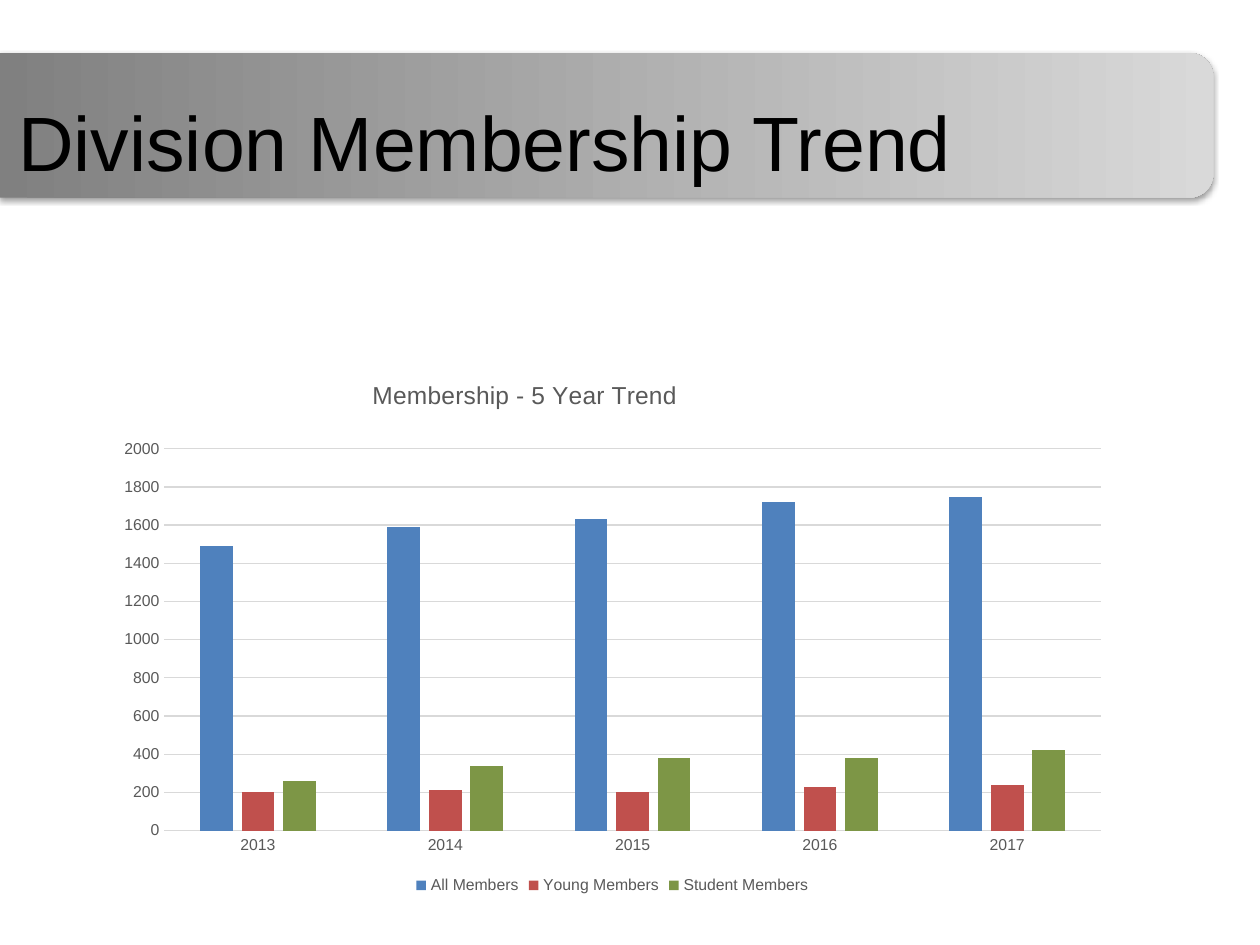
"""Build the division membership trend slide with python-pptx."""
from pptx import Presentation
from pptx.chart.data import CategoryChartData
from pptx.dml.color import RGBColor
from pptx.enum.chart import XL_CHART_TYPE, XL_LEGEND_POSITION, XL_TICK_MARK
from pptx.enum.shapes import MSO_SHAPE
from pptx.enum.text import MSO_ANCHOR, PP_ALIGN
from pptx.oxml import parse_xml
from pptx.oxml.ns import nsdecls, qn
from pptx.util import Pt

COLUMNS = XL_CHART_TYPE.COLUMN_CLUSTERED
LEGEND_BOTTOM = XL_LEGEND_POSITION.BOTTOM
NO_TICK = XL_TICK_MARK.NONE
ROUND_END = MSO_SHAPE.ROUND_2_SAME_RECTANGLE
MIDDLE = MSO_ANCHOR.MIDDLE
CENTER = PP_ALIGN.CENTER
TITLE_ONLY = 5

COLORS = {
    "title": "000000", "label": "595959", "grid": "D9D9D9",
    "banner_dark": "808080", "banner_light": "D9D9D9", "shadow": "000000",
    "All Members": "4F81BD", "Young Members": "C0504D", "Student Members": "7D9646",
}
YEARS = ["2013", "2014", "2015", "2016", "2017"]
MEMBERS = {
    "All Members": [1490, 1590, 1630, 1720, 1750],
    "Young Members": [200, 210, 200, 230, 240],
    "Student Members": [260, 340, 380, 380, 420],
}


class SlideBuilder:
    """Hold the style and the current slide."""

    font_name = "Arial"

    def __init__(self, slide):
        self.slide = slide

    def color(self, key):
        return RGBColor.from_string(COLORS[key])

    def style(self, font, size, key):
        font.name, font.size, font.bold = self.font_name, Pt(size), False
        font.color.rgb = self.color(key)

    def line(self, line, key):
        line.color.rgb = self.color(key)
        line.width = Pt(0.75)

    def banner(self, left, top, width, height):
        center_x, center_y = left + width / 2, top + height / 2
        banner = self.slide.shapes.add_shape(
            ROUND_END, Pt(center_x - height / 2), Pt(center_y - width / 2), Pt(height), Pt(width))
        banner.rotation = 90
        banner.line.fill.background()
        banner.fill.gradient()
        banner.fill.gradient_angle = 90
        for stop, key in zip(banner.fill.gradient_stops, ("banner_dark", "banner_light")):
            stop.color.rgb = self.color(key)
        banner.fill.gradient_stops[0].position = 0
        banner.fill.gradient_stops[1].position = 1
        banner._element.spPr.append(parse_xml(
            f'<a:effectLst {nsdecls("a")}><a:outerShdw blurRad="{Pt(3.1)}" dist="{Pt(1.6)}" '
            f'dir="5400000" rotWithShape="0"><a:srgbClr val="{COLORS["shadow"]}">'
            '<a:alpha val="38000"/></a:srgbClr></a:outerShdw></a:effectLst>'))
        self.slide.shapes._spTree.insert(2, banner._element)

    def title(self, text, left, top, width, height):
        title = self.slide.shapes.title
        title.left, title.top, title.width, title.height = map(Pt, (left, top, width, height))
        title.text_frame.text = text
        title.text_frame.vertical_anchor = MIDDLE
        heading = title.text_frame.paragraphs[0]
        heading.alignment = CENTER
        self.style(heading.font, 44, "title")

    def layout(self, parent, index, inner=False, **fractions):
        for old in parent.findall(qn("c:layout")):
            parent.remove(old)
        target = '<c:layoutTarget val="inner"/>' if inner else ""
        modes = '<c:xMode val="edge"/><c:yMode val="edge"/>'
        sizes = "".join(f'<c:{side} val="{value}"/>' for side, value in fractions.items())
        parent.insert(index, parse_xml(
            f'<c:layout {nsdecls("c")}><c:manualLayout>{target}{modes}{sizes}'
            '</c:manualLayout></c:layout>'))

    def column_chart(self, heading, categories, series, left, top, width, height):
        data = CategoryChartData()
        data.categories = categories
        for name, values in series.items():
            data.add_series(name, values)
        chart = self.slide.shapes.add_chart(
            COLUMNS, Pt(left), Pt(top), Pt(width), Pt(height), data).chart
        self.style(chart.font, 10, "title")

        chart.has_title = True
        chart.chart_title.include_in_layout = False
        caption = chart.chart_title.text_frame
        caption.text = heading
        self.style(caption.paragraphs[0].font, 14, "label")
        self.layout(chart.chart_title._element, 1, x=0.26, y=0.01)
        plot_area = chart._chartSpace.chart.plotArea
        self.layout(plot_area, 0, inner=True, x=0.06, y=0.15, w=0.92, h=0.72)

        chart.has_legend = True
        chart.legend.position = LEGEND_BOTTOM
        chart.legend.include_in_layout = False
        self.style(chart.legend.font, 9, "label")

        plot = chart.plots[0]
        plot.gap_width, plot.overlap = 219, -27
        plot.vary_by_categories = False
        for group in plot.series:
            group.format.fill.solid()
            group.format.fill.fore_color.rgb = self.color(group.name)

        for axis in (chart.category_axis, chart.value_axis):
            axis.major_tick_mark = axis.minor_tick_mark = NO_TICK
            self.style(axis.tick_labels.font, 9, "label")
        self.line(chart.category_axis.format.line, "grid")
        scale = chart.value_axis
        scale.minimum_scale, scale.maximum_scale, scale.major_unit = 0, 2000, 200
        scale.format.line.fill.background()
        self.line(scale.major_gridlines.format.line, "grid")


def main():
    presentation = Presentation()
    presentation.slide_width, presentation.slide_height = Pt(720), Pt(540)
    layout = presentation.slide_layouts[TITLE_ONLY]
    builder = SlideBuilder(presentation.slides.add_slide(layout))
    builder.banner(0, 30.2, 693.4, 82.8)
    builder.title("Division Membership Trend", 0, 44.6, 554.4, 71.3)
    builder.column_chart("Membership - 5 Year Trend", YEARS, MEMBERS, 59, 211, 581.8, 303.1)
    presentation.save("out.pptx")


if __name__ == "__main__":
    main()
